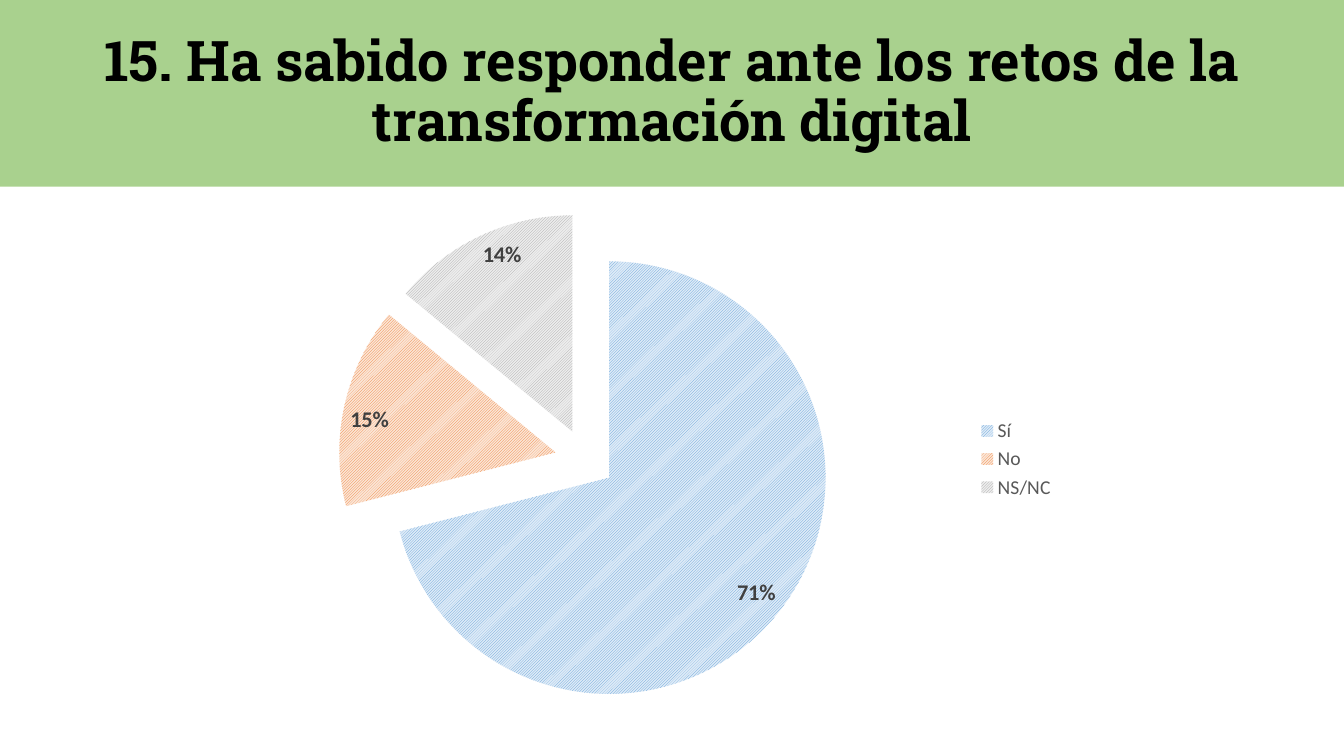
"""Build the survey slide on the challenges of digital transformation."""
from dataclasses import dataclass

from lxml.etree import Element
from pptx import Presentation
from pptx.chart.data import CategoryChartData
from pptx.dml.color import RGBColor
from pptx.enum.chart import XL_CHART_TYPE as ChartType
from pptx.enum.chart import XL_LABEL_POSITION as LabelPosition
from pptx.enum.chart import XL_LEGEND_POSITION as LegendPosition
from pptx.enum.dml import MSO_PATTERN as Pattern
from pptx.enum.text import MSO_ANCHOR as Anchor
from pptx.enum.text import MSO_AUTO_SIZE as AutoSize
from pptx.enum.text import PP_ALIGN as Align
from pptx.oxml.ns import qn
from pptx.util import Inches, Pt

WIDTH, HEIGHT = Inches(13.33), Inches(7.5)
TITLE = "15. Ha sabido responder ante los retos de la transformación digital"
EXPLOSION = 14


@dataclass(frozen=True)
class Answer:
    """One slice of the pie."""
    name: str
    percent: int
    line: str
    ground: str


ANSWERS = [
    Answer("Sí", 71, "5B9BD5", "DEEBF7"),
    Answer("No", 15, "ED7D31", "FBE5D6"),
    Answer("NS/NC", 14, "A5A5A5", "EDEDED"),
]


def color(value: str) -> RGBColor:
    """Turn a hex string into a colour."""
    return RGBColor.from_string(value)


def share(left: float, top: float, width: float, height: float) -> tuple:
    """Turn shares of the slide's size into lengths."""
    return (int(WIDTH * left), int(HEIGHT * top),
            int(WIDTH * width), int(HEIGHT * height))


def style_font(font, size: float, ink: str, name: str = "Calibri",
               bold: bool = False) -> None:
    """Set size, colour, typeface and weight of a font."""
    font.size, font.name, font.bold = Pt(size), name, bold
    font.color.rgb = color(ink)


def write(shape, text: str, *, spacing: float = 1.0, **style) -> None:
    """Write one centred paragraph in a shape."""
    frame = shape.text_frame
    frame.word_wrap = True
    frame.auto_size = AutoSize.NONE
    frame.vertical_anchor = Anchor.MIDDLE
    para = frame.paragraphs[0]
    para.alignment, para.line_spacing = Align.CENTER, spacing
    span = para.add_run()
    span.text = text
    style_font(span.font, **style)


def add_title(page) -> None:
    """Place the title as a green band across the top."""
    band = page.shapes.title
    band.left, band.top, band.width, band.height = share(0, 0, 1, 0.247)
    band.fill.solid()
    band.fill.fore_color.rgb = color("A9D18E")
    write(band, TITLE, spacing=0.9, size=40, ink="000000",
          name="Roboto Slab", bold=True)


def paint_slices(series) -> None:
    """Hatch each slice and pull all of them apart."""
    for index, answer in enumerate(ANSWERS):
        fill = series.points[index].format.fill
        fill.patterned()
        fill.pattern = Pattern.LIGHT_UPWARD_DIAGONAL
        fill.fore_color.rgb = color(answer.line)
        fill.back_color.rgb = color(answer.ground)
    explosion = Element(qn("c:explosion"), val=str(EXPLOSION))
    series._element.find(qn("c:dPt")).addprevious(explosion)


def add_pie(page) -> None:
    """Add the pie chart of the answers with its legend."""
    data = CategoryChartData()
    data.categories = [answer.name for answer in ANSWERS]
    data.add_series("Series 1", [answer.percent for answer in ANSWERS])
    chart = page.shapes.add_chart(
        ChartType.PIE, *share(0.1455, 0.2627, 0.6474, 0.6893), data).chart
    chart.has_title = False
    style_font(chart.font, 10, "000000")
    chart.has_legend = True
    chart.legend.position = LegendPosition.RIGHT
    chart.legend.include_in_layout = False
    style_font(chart.legend.font, 14, "595959")
    plot = chart.plots[0]
    plot.vary_by_categories = True
    paint_slices(plot.series[0])
    labels = plot.series[0].data_labels
    labels.show_percentage, labels.show_value = True, False
    labels.number_format, labels.number_format_is_linked = "0%", False
    labels.position = LabelPosition.INSIDE_END
    style_font(labels.font, 16, "404040", bold=True)


def main() -> None:
    """Build and save the deck."""
    deck = Presentation()
    deck.slide_width, deck.slide_height = WIDTH, HEIGHT
    page = deck.slides.add_slide(deck.slide_layouts[5])
    add_title(page)
    add_pie(page)
    deck.save("out.pptx")


if __name__ == "__main__":
    main()
